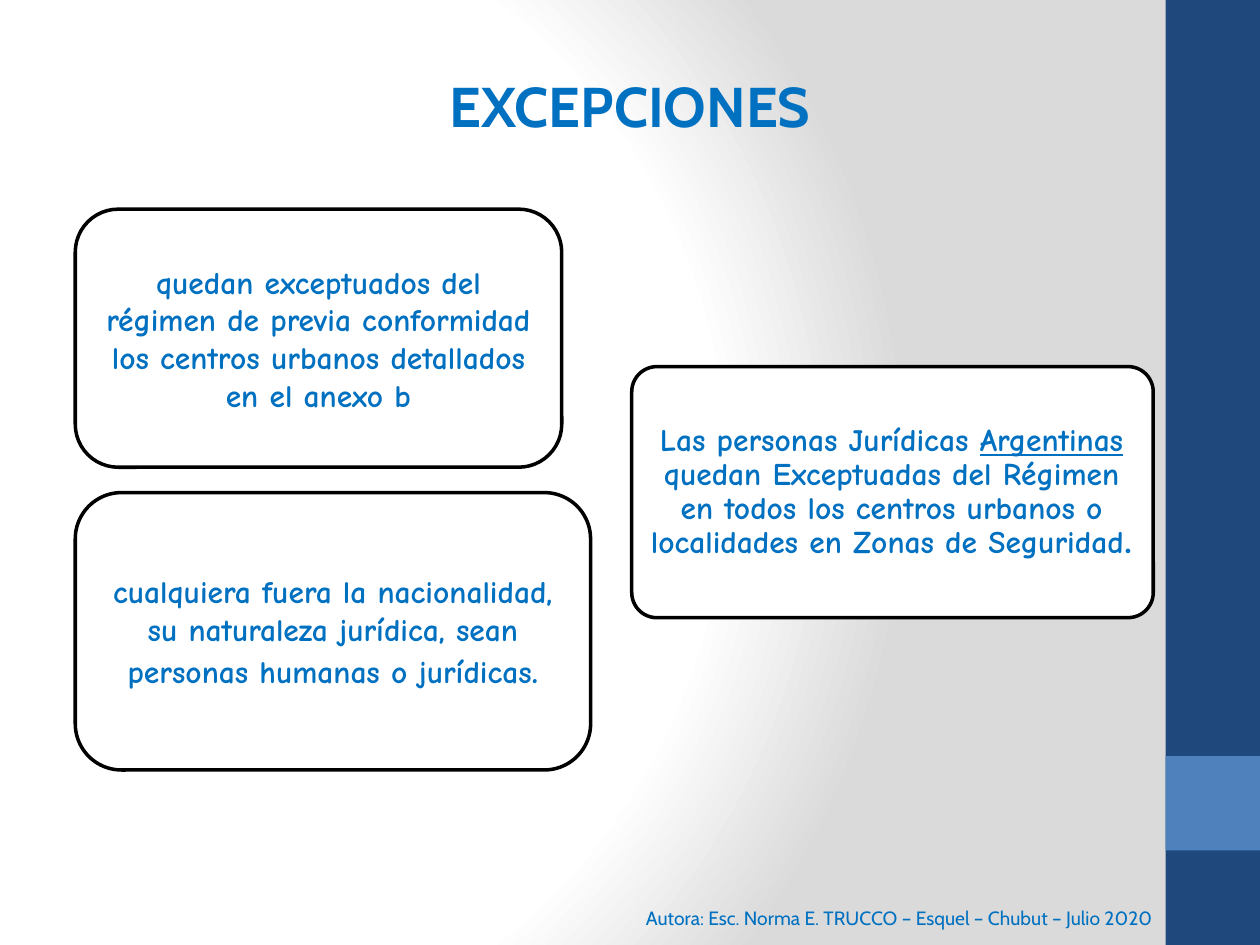
from pptx import Presentation
from pptx.dml.color import RGBColor
from pptx.enum.shapes import MSO_SHAPE as Shape
from pptx.enum.text import MSO_ANCHOR as Anchor, MSO_AUTO_SIZE as AutoSize, PP_ALIGN as Align
from pptx.oxml import parse_xml
from pptx.oxml.ns import nsdecls
from pptx.util import Pt

COLORS = {
    "text": "0070C0", "title_edge": "4F6228", "white": "FFFFFF", "gray": "DADADA",
    "border": "000000", "bar": "1F497D", "accent": "4F81BD",
}

# Content: each text is a list of (words, format changes)
TITLE = [("EXCEPCIONES", {})]
AUTHOR = [("Autora: Esc. Norma E. TRUCCO – Esquel – Chubut – Julio 2020", {})]
COMPANIES = [
    ("Las personas Jurídicas ", {}),
    ("Argentinas", {"underline": True}),
    (" quedan Exceptuadas del Régimen en todos los centros urbanos o "
     "localidades en Zonas de Seguridad", {}),
    (".", {"name": "Calibri"}),
]
CARDS = [
    ((43, 281.5, 294.5, 158.5),
     [("cualquiera fuera la nacionalidad, su naturaleza jurídica, sean "
       "personas humanas o jurídicas", {}),
      (".", {"size": Pt(20)})]),
    ((43, 119.5, 278, 147.5),
     [("quedan exceptuados del régimen de previa conformidad los centros "
       "urbanos detallados en el anexo b", {})]),
]
SIDE_BARS = [((666, 0, 54, 540), "bar"), ((666, 432, 54, 54), "accent")]
COMPANIES_BOX = (361, 209.5, 298, 143.5)
COMPANIES_TEXT = (365, 214, 289, 134.5)

TITLE_FONT = {"name": "Cabin", "size": Pt(32), "bold": True}
AUTHOR_FONT = {"name": "Cabin", "size": Pt(11), "bold": False}
CARD_FONT = {"name": "Comic Neue", "size": Pt(18), "bold": True}


def rgb(key):
    return RGBColor.from_string(COLORS[key])


def place(box):
    return [Pt(length) for length in box]


def write(frame, runs, font, align=Align.CENTER, anchor=Anchor.MIDDLE):
    frame.word_wrap = True
    frame.vertical_anchor = anchor
    line = frame.paragraphs[0]
    line.alignment = align
    for words, changes in runs:
        run = line.add_run()
        run.text = words
        for key, value in {**font, **changes}.items():
            setattr(run.font, key, value)
        run.font.color.rgb = rgb("text")
    return line


def add_block(shapes, kind, box, fill, border=None):
    block = shapes.add_shape(kind, *place(box))
    block.shadow.inherit = False
    block.fill.solid()
    block.fill.fore_color.rgb = rgb(fill)
    if border:
        block.line.color.rgb = rgb(border)
        block.line.width = Pt(2)
    else:
        block.line.fill.background()
    return block


def add_card(shapes, box):
    return add_block(shapes, Shape.ROUNDED_RECTANGLE, box, "white", "border")


def paint_background(slide):
    stops = "".join(
        f'<a:gs pos="{pos * 1000}"><a:srgbClr val="{COLORS[key]}"/></a:gs>'
        for pos, key in [(0, "white"), (75, "white"), (100, "gray")])
    slide.background.fill.solid()
    solid = slide.background.fill._xPr.find(
        "{http://schemas.openxmlformats.org/drawingml/2006/main}solidFill")
    solid.getparent().replace(solid, parse_xml(
        f'<a:gradFill {nsdecls("a")} rotWithShape="1"><a:gsLst>{stops}</a:gsLst>'
        '<a:path path="circle">'
        '<a:fillToRect l="20000" t="50000" r="100000" b="50000"/>'
        '</a:path></a:gradFill>'))


def main():
    deck = Presentation()
    deck.slide_width, deck.slide_height = Pt(720), Pt(540)
    slide = deck.slides.add_slide(deck.slide_layouts[5])
    shapes = slide.shapes
    paint_background(slide)

    # Side bars
    for box, fill in SIDE_BARS:
        add_block(shapes, Shape.RECTANGLE, box, fill)

    # Author line
    author = shapes.add_textbox(*place((218, 505.5, 448, 29)))
    write(author.text_frame, AUTHOR, AUTHOR_FONT, Align.RIGHT, Anchor.BOTTOM)

    # Title with a thin text outline
    title = shapes.title
    title.left, title.top, title.width, title.height = place((36.5, 37.5, 647, 46))
    heading = write(title.text_frame, TITLE, TITLE_FONT, anchor=Anchor.TOP)
    title.text_frame.auto_size = AutoSize.SHAPE_TO_FIT_TEXT
    heading.runs[0].font._element.insert(0, parse_xml(
        f'<a:ln {nsdecls("a")} w="12700"><a:solidFill>'
        f'<a:srgbClr val="{COLORS["title_edge"]}"/></a:solidFill></a:ln>'))

    # Companies card: frame and text grouped
    group = shapes.add_group_shape()
    add_card(group.shapes, COMPANIES_BOX).adjustments[0] = 0.1
    companies = group.shapes.add_textbox(*place(COMPANIES_TEXT)).text_frame
    insets = {"margin_left": 3, "margin_right": 3, "margin_top": 2, "margin_bottom": 2}
    for side, inset in insets.items():
        setattr(companies, side, Pt(inset))
    write(companies, COMPANIES, CARD_FONT).line_spacing = 0.9

    # Left cards
    for box, runs in CARDS:
        write(add_card(shapes, box).text_frame, runs, CARD_FONT)

    deck.save("out.pptx")


if __name__ == "__main__":
    main()
